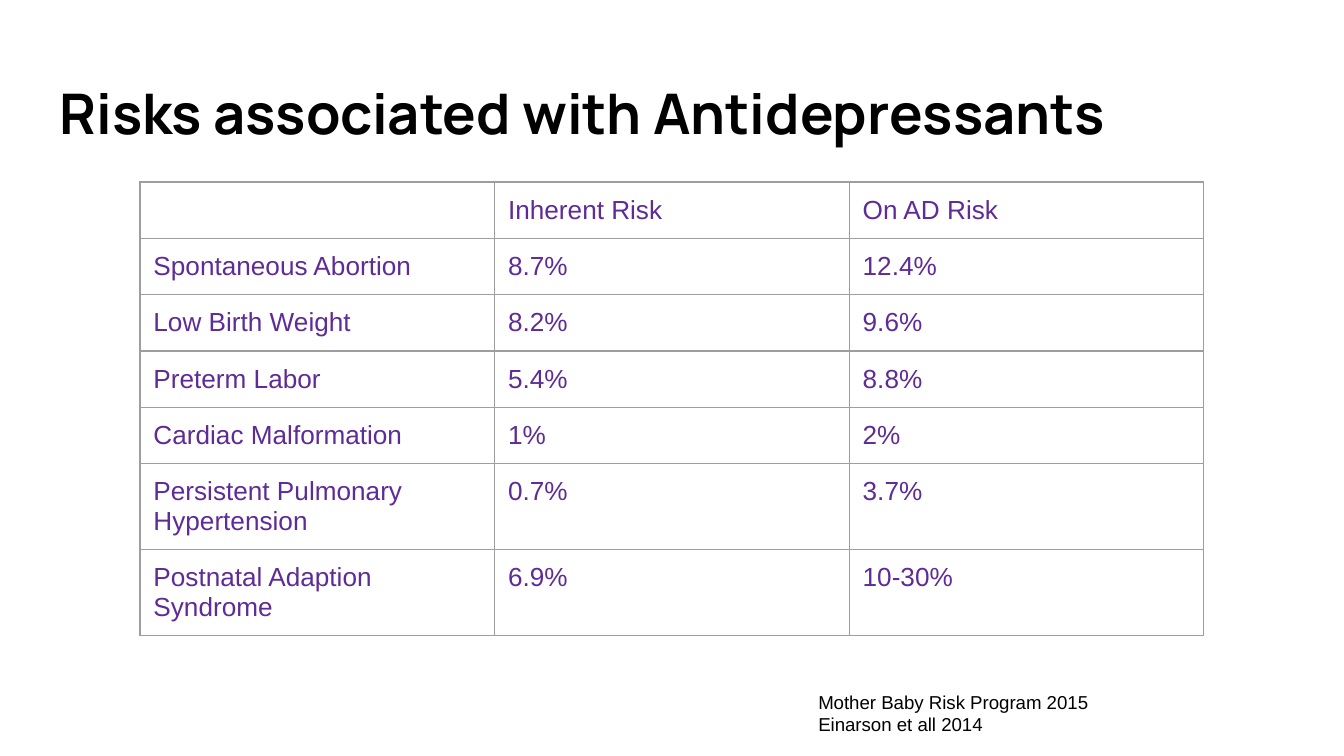
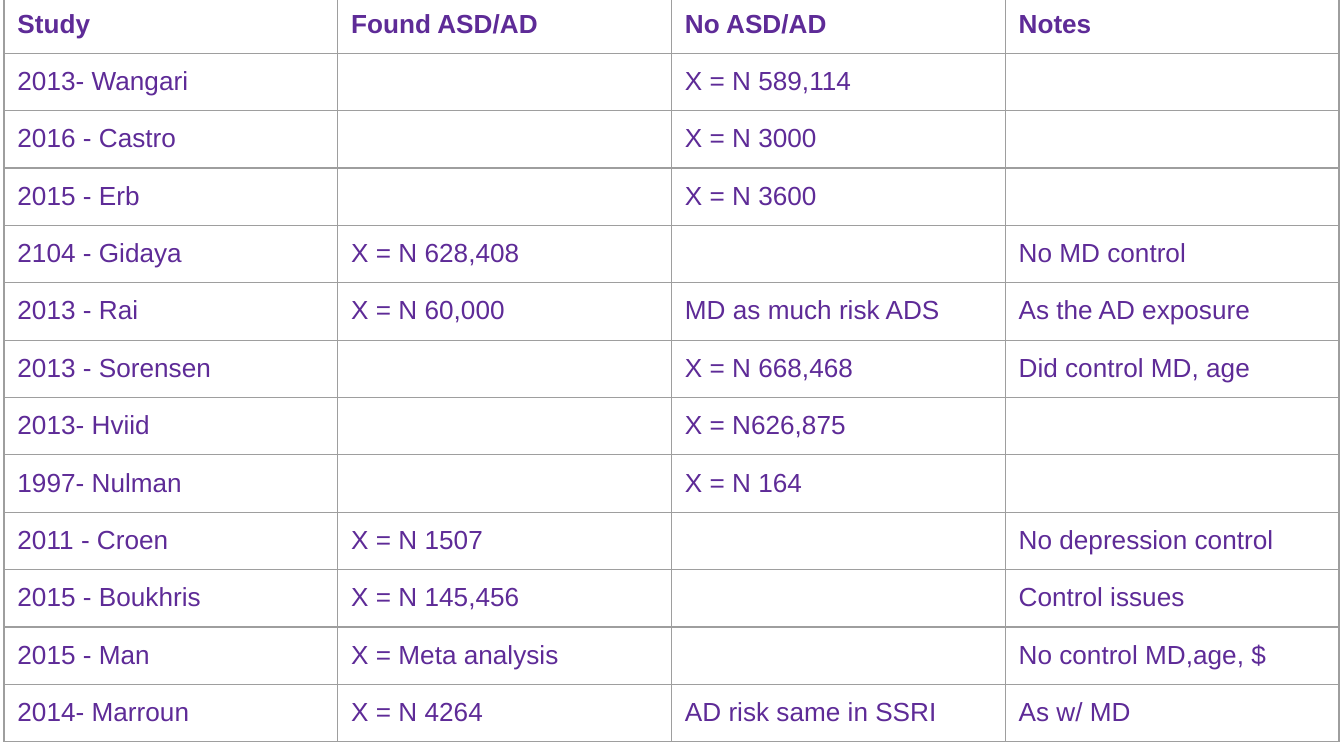
from lxml import etree
from pptx import Presentation
from pptx.dml.color import RGBColor
from pptx.enum.text import MSO_ANCHOR, MSO_AUTO_SIZE, PP_ALIGN
from pptx.oxml.ns import qn
from pptx.util import Pt

MIDDLE = MSO_ANCHOR.MIDDLE
TOP = MSO_ANCHOR.TOP
NO_FIT = MSO_AUTO_SIZE.NONE
LEFT = PP_ALIGN.LEFT

PURPLE = RGBColor(0x5E, 0x2B, 0x97)
BLACK = RGBColor(0, 0, 0)
GREY = RGBColor(0x9E, 0x9E, 0x9E)

BODY_FONT = "Arial"
TITLE_FONT = "Manrope"
TITLE_ONLY, BLANK = 5, 6
CELL_SIZE = 14
INSET = 13.44

RISKS = [
    ("", "Inherent Risk", "On AD Risk"),
    ("Spontaneous Abortion", "8.7%", "12.4%"),
    ("Low Birth Weight", "8.2%", "9.6%"),
    ("Preterm Labor", "5.4%", "8.8%"),
    ("Cardiac Malformation", "1%", "2%"),
    ("Persistent Pulmonary Hypertension", "0.7%", "3.7%"),
    ("Postnatal Adaption Syndrome", "6.9%", "10-30%"),
]
STUDIES = [
    ("Study", "Found ASD/AD", "No ASD/AD", "Notes"),
    ("2013- Wangari", "", "X = N 589,114", ""),
    ("2016 - Castro", "", "X = N 3000", ""),
    ("2015 - Erb", "", "X = N 3600", ""),
    ("2104 - Gidaya", "X = N 628,408", "", "No MD control"),
    ("2013 - Rai", "X = N 60,000", "MD as much risk ADS", "As the AD exposure"),
    ("2013 - Sorensen", "", "X = N 668,468", "Did control MD, age"),
    ("2013- Hviid", "", "X = N626,875", ""),
    ("1997- Nulman", "", "X = N 164", ""),
    ("2011 - Croen", "X = N 1507", "", "No depression control"),
    ("2015 - Boukhris", "X = N 145,456", "", "Control issues"),
    ("2015 - Man", "X = Meta analysis", "", "No control MD,age, $"),
    ("2014- Marroun", "X = N 4264", "AD risk same in SSRI", "As w/ MD"),
]


def px(n):
    return round(n * 914400 / 134.4)


def style(p, font, size, color, bold=False):
    p.alignment = LEFT
    p.font.name = font
    p.font.size = Pt(size)
    p.font.color.rgb = color
    p.font.bold = bold


def set_frame(tf, anchor):
    tf.word_wrap = True
    tf.auto_size = NO_FIT
    tf.vertical_anchor = anchor
    tf.margin_left = tf.margin_right = px(INSET)
    tf.margin_top = tf.margin_bottom = px(INSET)


def set_borders(cell):
    tc_pr = cell._tc.get_or_add_tcPr()
    for side in ("lnL", "lnR", "lnT", "lnB"):
        ln = etree.SubElement(tc_pr, qn(f"a:{side}"), w=str(Pt(0.75)))
        fill = etree.SubElement(ln, qn("a:solidFill"))
        etree.SubElement(fill, qn("a:srgbClr"), val=str(GREY))


def fill_cell(cell, text, bold):
    set_borders(cell)
    cell.fill.background()
    cell.vertical_anchor = TOP
    cell.margin_left = cell.margin_right = px(INSET)
    cell.margin_top = cell.margin_bottom = px(INSET)
    p = cell.text_frame.paragraphs[0]
    style(p, BODY_FONT, CELL_SIZE, PURPLE, bold)
    if text:
        p.add_run().text = text
    else:
        etree.SubElement(p._p, qn("a:endParaRPr"), sz=str(CELL_SIZE * 100))


def add_grid(s, box, rows, heights, bold_header=False):
    x, y, w, h = map(px, box)
    columns = len(rows[0])
    table = s.shapes.add_table(len(rows), columns, x, y, w, h).table
    table.first_row = table.horz_banding = False
    for column in table.columns:
        column.width = w // columns
    for row, height in zip(table.rows, heights):
        row.height = px(height)
    for i, texts in enumerate(rows):
        for j, text in enumerate(texts):
            fill_cell(table.cell(i, j), text, bold_header and i == 0)


def add_title(s, box, text):
    title = s.shapes.title
    title.left, title.top, title.width, title.height = map(px, box)
    tf = title.text_frame
    set_frame(tf, MIDDLE)
    tf.text = text
    style(tf.paragraphs[0], TITLE_FONT, 30, BLACK, True)


def add_sources(s, box, lines):
    tf = s.shapes.add_textbox(*map(px, box)).text_frame
    set_frame(tf, TOP)
    tf.text = "\n".join(lines)
    for p in tf.paragraphs:
        style(p, BODY_FONT, 10, BLACK)


def risks_slide(prs):
    s = prs.slides.add_slide(prs.slide_layouts[TITLE_ONLY])
    add_grid(s, (140, 182, 1064, 452), RISKS, [56] * 5 + [86] * 2)
    add_sources(s, (805, 677, 344, 50),
                ["Mother Baby Risk Program 2015", "Einarson et all 2014"])
    add_title(s, (46, 66, 1252, 92), "Risks associated with Antidepressants")


def studies_slide(prs):
    s = prs.slides.add_slide(prs.slide_layouts[BLANK])
    height = 746
    add_grid(s, (4, -4, 1335, height), STUDIES,
             [height / len(STUDIES)] * len(STUDIES), bold_header=True)


def main():
    prs = Presentation()
    prs.slide_width, prs.slide_height = px(1344), px(756)
    risks_slide(prs)
    studies_slide(prs)
    prs.save("out.pptx")


if __name__ == "__main__":
    main()
